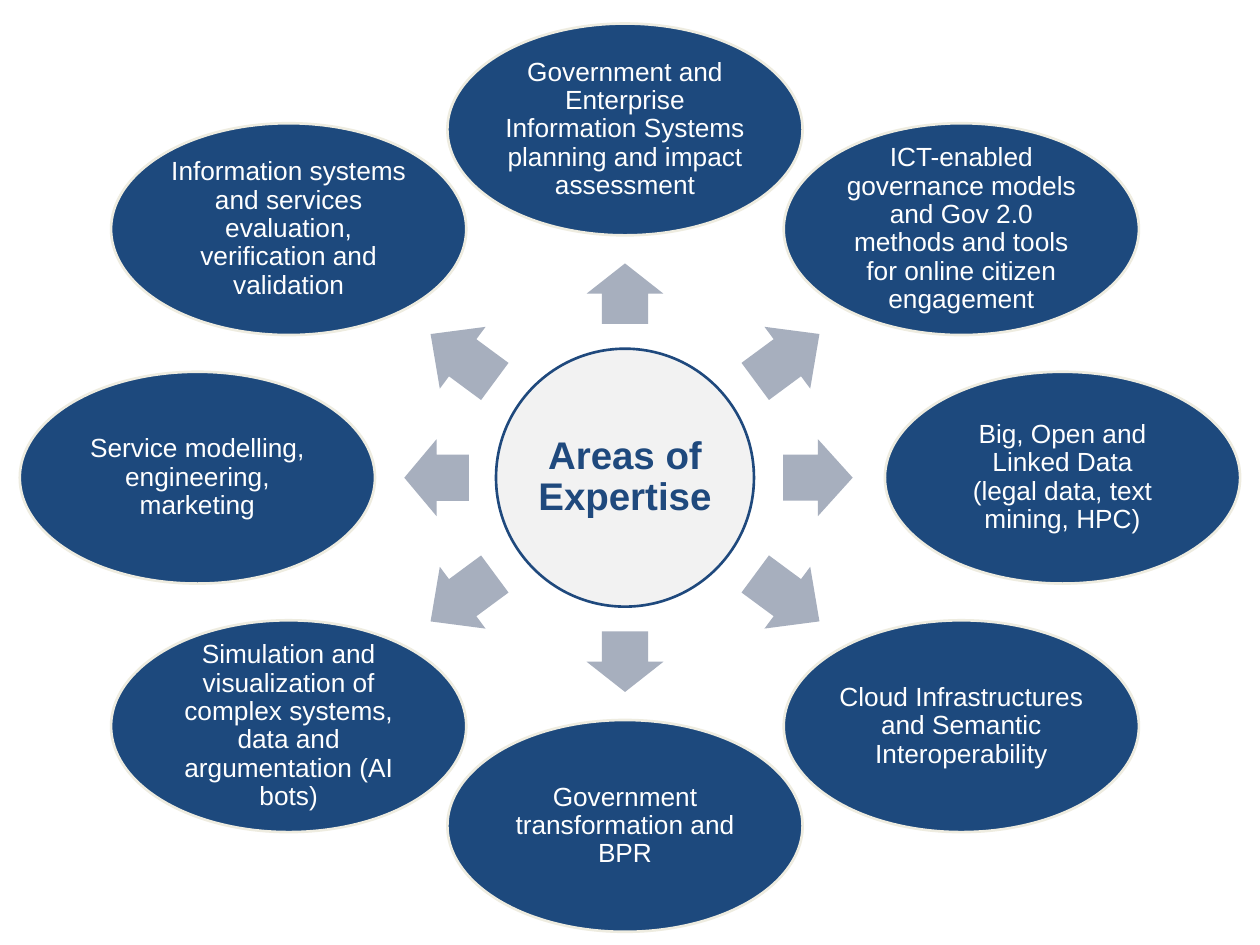
from dataclasses import dataclass
from math import atan2, cos, degrees, sin

from pptx import Presentation
from pptx.dml.color import RGBColor
from pptx.enum.shapes import MSO_SHAPE
from pptx.enum.text import MSO_ANCHOR, PP_ALIGN
from pptx.util import Cm, Pt

HUB_X, HUB_Y = 12.6, 9.63
HUB_SIZE = 5.2
OVAL_W, OVAL_H = 7.16, 4.27
ARROW_H = 1.55
DIAG_X, DIAG_Y = 6.78, 5.01
POLE_Y = 7.02


@dataclass
class Spoke:
    """One area: oval offset from the hub, then the arrow's length and distance (cm)."""
    text: str
    dx: float
    dy: float
    arrow_len: float = 1.61
    arrow_dist: float = 4.07


SPOKES = [
    Spoke("Government and Enterprise Information Systems planning and impact assessment",
          0, -POLE_Y, 1.22, 3.71),
    Spoke("ICT-enabled governance models and Gov 2.0 methods and tools for online "
          "citizen engagement", DIAG_X, -DIAG_Y),
    Spoke("Big, Open and Linked Data\n(legal data, text mining, HPC)", 8.82, 0, 1.4, 3.89),
    Spoke("Cloud Infrastructures and Semantic Interoperability", DIAG_X, DIAG_Y),
    Spoke("Government transformation and BPR", 0, POLE_Y, 1.22, 3.71),
    Spoke("Simulation and visualization of complex systems, data and argumentation (AI bots)",
          -DIAG_X, DIAG_Y),
    Spoke("Service modelling, engineering, marketing", -8.62, 0, 1.3, 3.8),
    Spoke("Information systems and services evaluation, verification and validation",
          -DIAG_X, -DIAG_Y),
]


def rgb(value: str) -> RGBColor:
    return RGBColor.from_string(value)


def add_centred(s, kind: MSO_SHAPE, x: float, y: float, w: float, h: float, fill: str):
    """Add a filled shape whose centre is at x, y (cm)."""
    sp = s.shapes.add_shape(kind, Cm(x - w / 2), Cm(y - h / 2), Cm(w), Cm(h))
    sp.shadow.inherit = False
    sp.fill.solid()
    sp.fill.fore_color.rgb = rgb(fill)
    return sp


def add_oval(s, text: str, x: float, y: float, w: float, h: float, fill: str, line: str,
             color: str, size: float, inset: float, bold: bool = False) -> None:
    sp = add_centred(s, MSO_SHAPE.OVAL, x, y, w, h, fill)
    sp.line.color.rgb = rgb(line)
    sp.line.width = Pt(1.5)
    tf = sp.text_frame
    tf.word_wrap = True
    tf.vertical_anchor = MSO_ANCHOR.MIDDLE
    tf.margin_left = tf.margin_right = tf.margin_top = tf.margin_bottom = Cm(inset)
    tf.text = text
    for p in tf.paragraphs:
        p.alignment = PP_ALIGN.CENTER
        p.line_spacing = 0.9
        for r in p.runs:
            r.font.name = "Arial"
            r.font.size = Pt(size)
            r.font.bold = bold
            r.font.color.rgb = rgb(color)


def add_arrow(s, spoke: Spoke) -> None:
    angle = atan2(spoke.dy, spoke.dx)
    length = spoke.arrow_len
    sp = add_centred(s, MSO_SHAPE.RIGHT_ARROW,
                     HUB_X + spoke.arrow_dist * cos(angle),
                     HUB_Y + spoke.arrow_dist * sin(angle),
                     length, ARROW_H, "A7AFBE")
    sp.line.fill.background()
    sp.rotation = degrees(angle) % 360
    sp.adjustments[0] = 0.6
    sp.adjustments[1] = 0.5 * length / min(length, ARROW_H)


def main() -> None:
    prs = Presentation()
    prs.slide_width, prs.slide_height = Cm(25.4), Cm(19.05)
    s = prs.slides.add_slide(prs.slide_layouts[6])
    add_oval(s, "Areas of Expertise", HUB_X, HUB_Y, HUB_SIZE, HUB_SIZE,
             "F2F2F2", "1F497D", "1F497D", 22, 0.08, bold=True)
    for spoke in SPOKES:
        add_arrow(s, spoke)
        add_oval(s, spoke.text, HUB_X + spoke.dx, HUB_Y + spoke.dy, OVAL_W, OVAL_H,
                 "1D497D", "EEECE0", "FFFFFF", 15, 0.05)
    prs.save("out.pptx")


if __name__ == "__main__":
    main()
